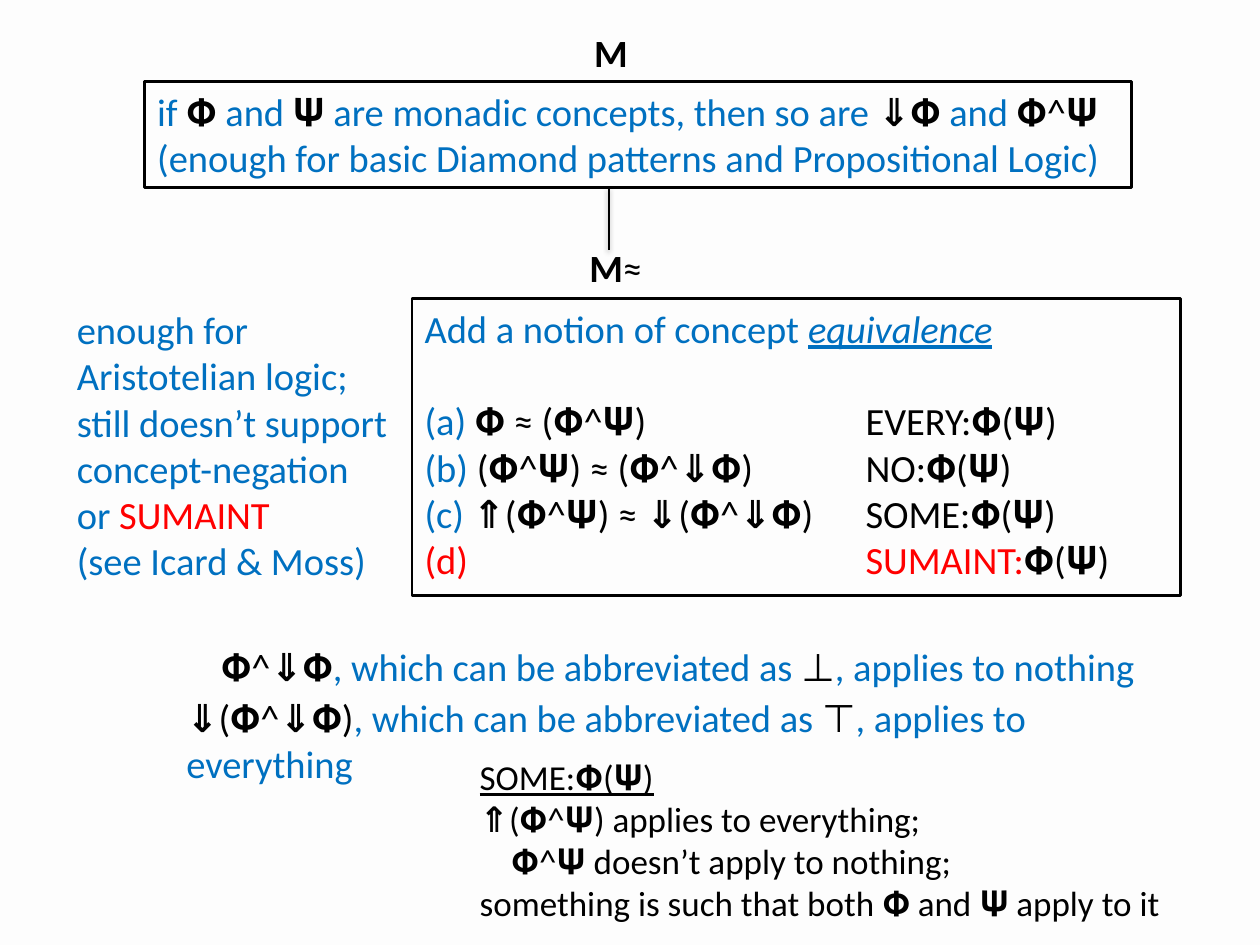
from itertools import groupby

from lxml.etree import SubElement
from pptx import Presentation
from pptx.dml.color import RGBColor
from pptx.enum.shapes import MSO_CONNECTOR, MSO_SHAPE
from pptx.enum.text import MSO_ANCHOR, MSO_AUTO_SIZE, PP_ALIGN
from pptx.oxml import parse_xml
from pptx.oxml.ns import nsdecls, qn
from pptx.util import Cm, Pt

BLACK, BLUE, RED = "000000", "0070C0", "FF0000"
ARROWS = "⇑⇓"


def color(hex_string):
    return RGBColor.from_string(hex_string)


def add_runs(paragraph, pieces, size):
    """Write (text, colour, style) pieces; arrows are bold, style holds b, i, u."""
    for text, hex_string, *style in pieces:
        style = style[0] if style else ""
        for is_arrow, letters in groupby(text, lambda letter: letter in ARROWS):
            run = paragraph.add_run()
            run.text = "".join(letters)
            font = run.font
            font.name, font.size = "Calibri", Pt(size)
            font.color.rgb = color(hex_string)
            font.bold = is_arrow or "b" in style
            font.italic = "i" in style
            font.underline = "u" in style


def fill_text(shape, lines, size):
    """Put one paragraph per line into the shape and return the paragraphs."""
    frame = shape.text_frame
    frame.word_wrap = True
    frame.auto_size = MSO_AUTO_SIZE.SHAPE_TO_FIT_TEXT
    frame.vertical_anchor = MSO_ANCHOR.TOP
    for number, pieces in enumerate(lines):
        paragraph = frame.add_paragraph() if number else frame.paragraphs[0]
        paragraph.alignment = PP_ALIGN.LEFT
        add_runs(paragraph, pieces, size)
    return frame.paragraphs


def add_text(slide, left, top, width, height, lines, size=22):
    shape = slide.shapes.add_textbox(Cm(left), Cm(top), Cm(width), Cm(height))
    return fill_text(shape, lines, size)


def add_box(slide, left, top, width, height, lines, size=22):
    shape = slide.shapes.add_shape(
        MSO_SHAPE.RECTANGLE, Cm(left), Cm(top), Cm(width), Cm(height))
    shape.shadow.inherit = False
    shape.fill.background()
    shape.line.color.rgb = color(BLACK)
    shape.line.width = Pt(1.5)
    return fill_text(shape, lines, size)


def add_link(slide, x, top, bottom):
    """Draw a vertical line with a soft shadow below it."""
    line = slide.shapes.add_connector(
        MSO_CONNECTOR.STRAIGHT, Cm(x), Cm(top), Cm(x), Cm(bottom))
    line.line.color.rgb = color(BLACK)
    line.line.width = Pt(1)
    line._element.spPr.append(parse_xml(
        f'<a:effectLst {nsdecls("a")}>'
        f'<a:outerShdw blurRad="{Pt(3.1)}" dist="{Pt(1.6)}" dir="5400000" rotWithShape="0">'
        f'<a:srgbClr val="{BLACK}"><a:alpha val="38000"/></a:srgbClr>'
        '</a:outerShdw></a:effectLst>'))


def indent_first_line(paragraph, distance):
    paragraph._p.get_or_add_pPr().set("indent", str(Cm(distance)))


def add_tab_stop(paragraph, position):
    tabs = SubElement(paragraph._p.get_or_add_pPr(), qn("a:tabLst"))
    SubElement(tabs, qn("a:tab"), pos=str(Cm(position)), algn="l")


def main():
    presentation = Presentation()
    presentation.slide_width, presentation.slide_height = Cm(25.4), Cm(19.05)
    slide = presentation.slides.add_slide(presentation.slide_layouts[6])
    slide.background.fill.solid()
    slide.background.fill.fore_color.rgb = color("FDFDFD")

    # System M
    add_text(slide, 11.73, 0.46, 1.93, 1.19, [[("M", BLACK, "b")]])
    add_box(slide, 2.92, 1.65, 19.89, 2.13, [
        [("if ", BLUE), ("𝚽 ", BLACK), ("and ", BLUE), ("𝚿 ", BLACK),
         ("are monadic concepts, then so are ", BLUE), ("⇓𝚽 ", BLACK),
         ("and ", BLUE), ("𝚽^𝚿", BLACK)],
        [("(enough for basic Diamond patterns and Propositional Logic)", BLUE)],
    ])

    # System M with equivalence
    heading, *cases = add_box(slide, 8.31, 6.02, 15.49, 5.99, [
        [("Add a notion of concept ", BLUE), ("equivalence", BLUE, "iu")],
        [("(a) ", BLUE), ("𝚽 ≈ (𝚽^𝚿)\tEVERY:𝚽(𝚿)", BLACK)],
        [("(b) ", BLUE), ("(𝚽^𝚿) ≈ (𝚽^⇓𝚽)\tNO:𝚽(𝚿)", BLACK)],
        [("(c) ", BLUE), ("⇑(𝚽^𝚿) ≈ ⇓(𝚽^⇓𝚽)\tSOME:𝚽(𝚿)", BLACK)],
        [("(d)\tSUMAINT:", RED), ("𝚽(𝚿)", BLACK)],
    ])
    heading.space_after = Pt(26.5)
    for case in cases:
        add_tab_stop(case, 8.89)
    add_text(slide, 11.63, 4.8, 1.6, 1.19, [[("M", BLACK, "b"), ("≈", BLACK)]])
    add_link(slide, 12.27, 3.78, 5.03)

    # Side remark
    add_text(slide, 1.3, 6.05, 7.01, 5.89, [
        [("enough for", BLUE)],
        [("Aristotelian logic;", BLUE)],
        [("still doesn’t support", BLUE)],
        [("concept-negation", BLUE)],
        [("or ", BLUE), ("SUMAINT", RED)],
        [("(see Icard & Moss)", BLUE)],
    ])

    # Abbreviations
    nothing, everything = add_text(slide, 3.51, 12.83, 20.93, 2.24, [
        [("𝚽^⇓𝚽", BLACK), (", which can be abbreviated as ", BLUE),
         ("⊥", BLACK), (", applies to nothing", BLUE)],
        [("⇓(𝚽^⇓𝚽)", BLACK), (", which can be abbreviated as ", BLUE),
         ("⊤", BLACK), (", applies to everything", BLUE)],
    ])
    nothing.space_before, everything.space_before = Pt(6), Pt(3)
    indent_first_line(nothing, 0.7)

    # Reading of SOME
    some_lines = add_text(slide, 9.42, 15.11, 15.98, 3.68, [
        [("SOME:𝚽(𝚿)", BLACK, "u")],
        [("⇑(𝚽^𝚿) applies to everything;", BLACK)],
        [("𝚽^𝚿 doesn’t apply to nothing;", BLACK)],
        [("something is such that both 𝚽 and 𝚿 apply to it", BLACK)],
    ], size=20)
    indent_first_line(some_lines[2], 0.64)

    presentation.save("out.pptx")


if __name__ == "__main__":
    main()
